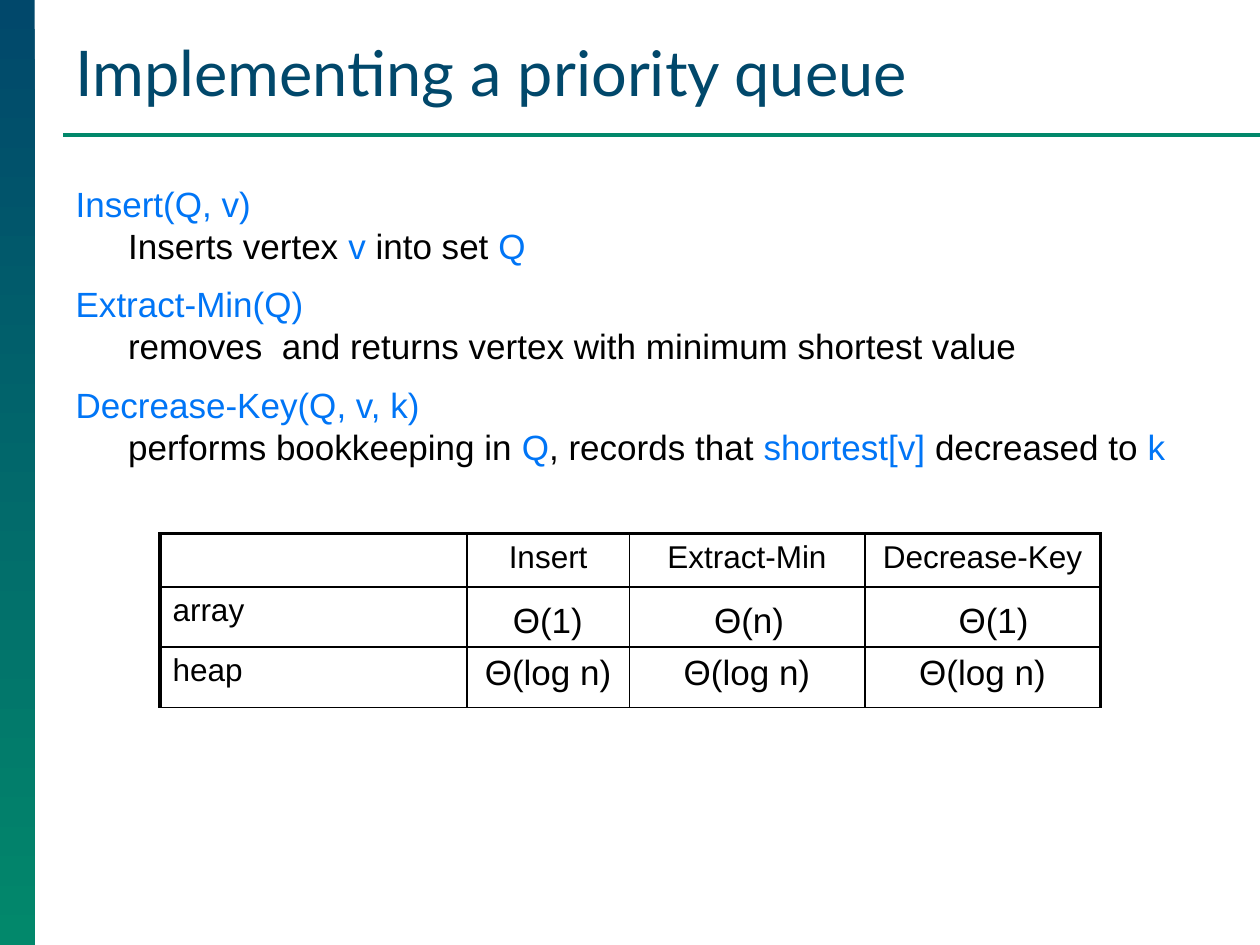
from dataclasses import dataclass
from lxml.etree import SubElement
from pptx import Presentation
from pptx.dml.color import RGBColor
from pptx.enum.shapes import MSO_CONNECTOR, MSO_SHAPE
from pptx.enum.text import MSO_ANCHOR, MSO_AUTO_SIZE, PP_ALIGN
from pptx.oxml.ns import qn
from pptx.slide import Slide
from pptx.util import Pt

NAVY = RGBColor(0x01, 0x48, 0x6B)
GREEN = RGBColor(0x02, 0x88, 0x6B)
BLUE = RGBColor(0x00, 0x75, 0xF6)
BLACK = RGBColor(0, 0, 0)

ITEMS = [
    ("Insert(Q, v)", ["Inserts vertex ", "v", " into set ", "Q"]),
    ("Extract-Min(Q)", ["removes  and returns vertex with minimum shortest value"]),
    ("Decrease-Key(Q, v, k)", ["performs bookkeeping in ", "Q", ", records that ",
                               "shortest[v]", " decreased to ", "k"]),
]
COSTS = [
    ["", "Insert", "Extract-Min", "Decrease-Key"],
    ["array", "", "", ""],
    ["heap", "Θ(log n)", "Θ(log n)", "Θ(log n)"],
]


def write(para, text, size=20, color=BLACK, font="Arial", align=PP_ALIGN.LEFT):
    para.alignment = align
    run = para.add_run()
    run.text = text
    run.font.size = Pt(size)
    run.font.name = font
    run.font.color.rgb = color


def border(cell, widths):
    props = cell._tc.get_or_add_tcPr()
    for place, (side, width) in enumerate(widths.items()):
        line = props.makeelement(qn(f"a:ln{side}"), {"w": str(Pt(width))})
        fill = SubElement(line, qn("a:solidFill"))
        SubElement(fill, qn("a:srgbClr"), val=str(BLACK))
        props.insert(place, line)


@dataclass
class Page:
    slide: Slide
    thin: float = 1
    thick: float = 2.25

    def place(self, shape, left, top, width, height):
        shape.left, shape.top = Pt(left), Pt(top)
        shape.width, shape.height = Pt(width), Pt(height)

    def band(self, *box):
        shape = self.slide.shapes.add_shape(MSO_SHAPE.RECTANGLE, *map(Pt, box))
        shape.shadow.inherit = False
        shape.line.fill.background()
        shape.fill.gradient()
        shape.fill.gradient_angle = 270
        for stop, color in zip(shape.fill.gradient_stops, (NAVY, GREEN)):
            stop.color.rgb = color

    def rule(self, *ends):
        line = self.slide.shapes.add_connector(MSO_CONNECTOR.STRAIGHT, *map(Pt, ends))
        line.line.color.rgb = GREEN
        line.line.width = Pt(self.thick)
        SubElement(line._element.spPr, qn("a:effectLst"))

    def title(self, text, *box):
        shape = self.slide.shapes.title
        self.place(shape, *box)
        frame = shape.text_frame
        frame.auto_size = MSO_AUTO_SIZE.NONE
        frame.vertical_anchor = MSO_ANCHOR.BOTTOM
        write(frame.paragraphs[0], text, size=36, color=NAVY, font="Lato")

    def body(self, items, *box):
        shape = self.slide.placeholders[1]
        self.place(shape, *box)
        frame = shape.text_frame
        frame.auto_size = MSO_AUTO_SIZE.NONE
        for row, (head, parts) in enumerate(items):
            para = frame.add_paragraph() if row else frame.paragraphs[0]
            props = para._p.get_or_add_pPr()
            props.set("marL", str(Pt(30)))
            props.set("indent", str(Pt(-30)))
            SubElement(props, qn("a:buNone"))
            para.line_spacing = Pt(24)
            para.space_before = Pt(9.4 if row else 0)
            write(para, head, color=BLUE)
            para.add_line_break()
            for turn, part in enumerate(parts):
                write(para, part, color=BLUE if turn % 2 else BLACK)

    def table(self, rows, left, top, widths, heights):
        grid = self.slide.shapes.add_table(
            len(heights), len(widths), Pt(left), Pt(top),
            Pt(sum(widths)), Pt(sum(heights))).table
        grid.first_row = grid.horz_banding = False
        for col, width in zip(grid.columns, widths):
            col.width = Pt(width)
        for row, height in zip(grid.rows, heights):
            row.height = Pt(height)
        for r, row in enumerate(rows):
            for c, text in enumerate(row):
                cell = grid.cell(r, c)
                cell.fill.background()
                border(cell, {
                    "L": self.thin if c else self.thick,
                    "R": self.thick if c == len(row) - 1 else self.thin,
                    "T": self.thin if r else self.thick,
                    "B": self.thin,
                })
                if text:
                    write(cell.text_frame.paragraphs[0], text,
                          size=20 if r and c else 18,
                          align=PP_ALIGN.CENTER if c else PP_ALIGN.LEFT)

    def label(self, text, *box):
        frame = self.slide.shapes.add_textbox(*map(Pt, box)).text_frame
        frame.word_wrap = False
        write(frame.paragraphs[0], text)


def main():
    deck = Presentation()
    deck.slide_width, deck.slide_height = Pt(720), Pt(540)
    page = Page(deck.slides.add_slide(deck.slide_layouts[1]))
    page.band(0, 0, 19.8, 540)
    page.rule(36, 77, 720, 77)
    page.title("Implementing a priority queue", 36, 15, 668, 51)
    page.table(COSTS, 91.4, 305, [175.5, 92.7, 134.6, 134.6], [30.4, 34.4, 34.4])
    for text, left in (("Θ(1)", 286), ("Θ(n)", 401), ("Θ(1)", 540.7)):
        page.label(text, left, 338.4, 54.7, 31)
    page.body(ITEMS, 36, 100.4, 642, 188.6)
    deck.save("out.pptx")


if __name__ == "__main__":
    main()
